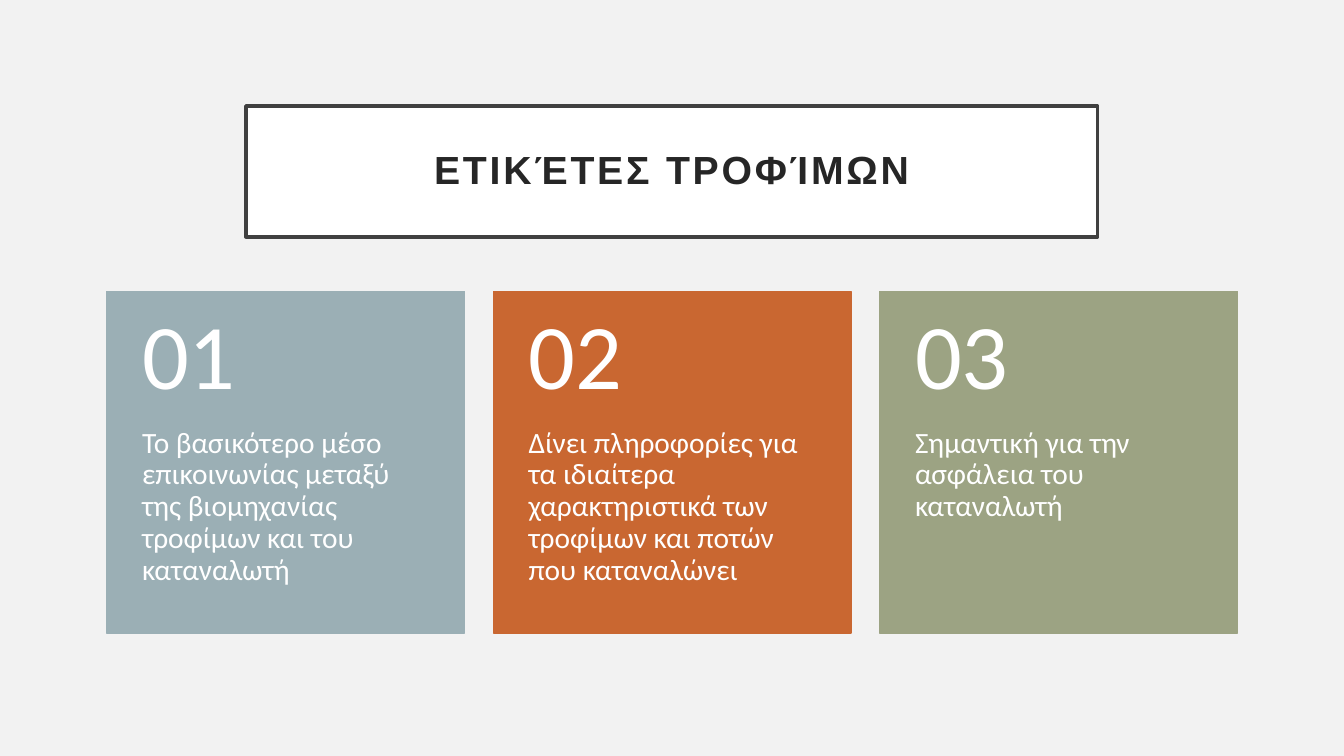
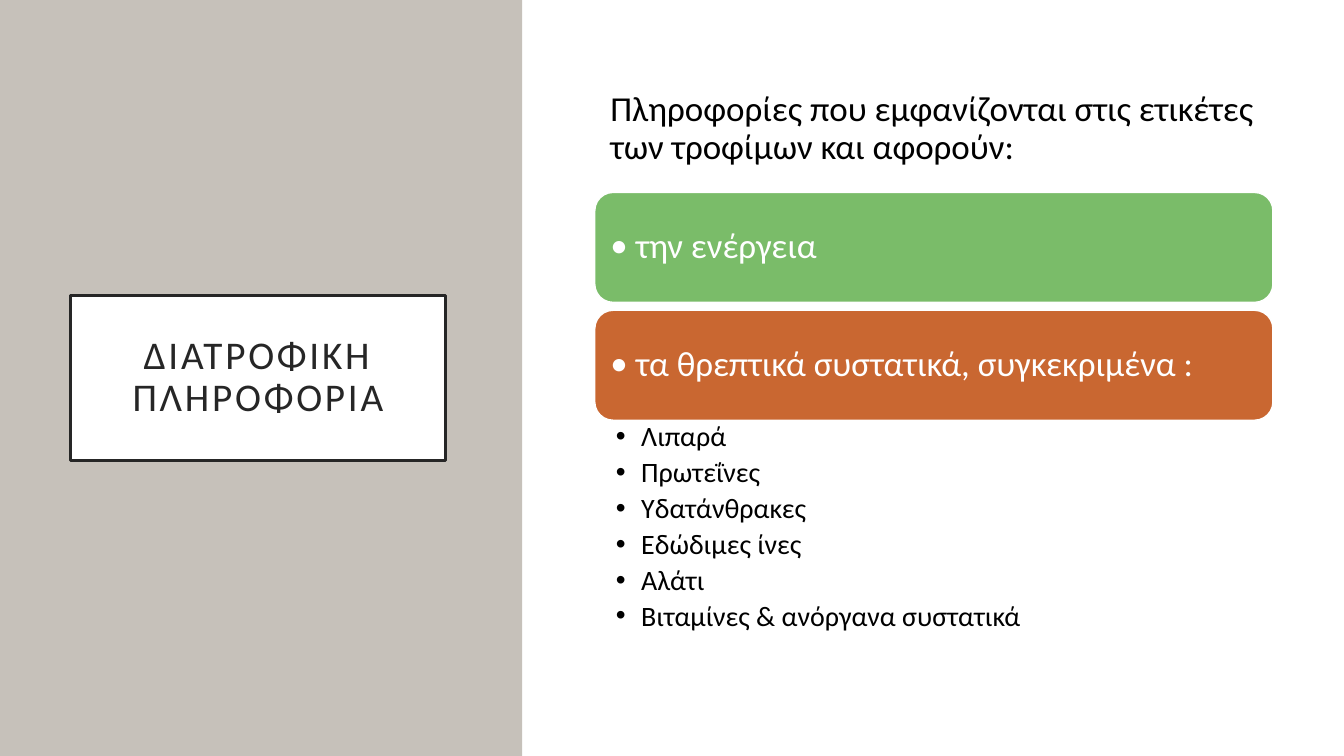
"""Build two slides on food labels and nutrition facts."""
from dataclasses import dataclass

from lxml import etree
from pptx import Presentation
from pptx import util as u
from pptx.dml import color as c
from pptx.enum import shapes as s, text as t
from pptx.oxml import ns


@dataclass(frozen=True)
class Theme:
    pale: str = "F2F2F2"
    white: str = "FFFFFF"
    black: str = "000000"
    ink: str = "262626"
    frame: str = "404040"
    sand: str = "C6C1BA"
    blue: str = "9BAFB5"
    rust: str = "C96731"
    olive: str = "9CA383"
    green: str = "7ABC69"
    font: str = "Calibri"
    alt: str = "Arial"
    title: int = 28
    digit: int = 66
    body: int = 21
    row: int = 25
    item: int = 20


@dataclass(frozen=True)
class Box:
    left: float
    top: float
    width: float
    height: float

    def cm(self) -> list:
        return [u.Cm(v) for v in (self.left, self.top, self.width, self.height)]


@dataclass(frozen=True)
class Card:
    digit: str
    text: str
    fill: str


@dataclass(frozen=True)
class Row:
    text: str
    fill: str
    ink: str
    mark: str = ""


TH = Theme()
WIDE, HIGH = 33.87, 19.05
CARDS = (
    Card("01", "Το βασικότερο μέσο επικοινωνίας μεταξύ της βιομηχανίας "
         "τροφίμων και του καταναλωτή", TH.blue),
    Card("02", "Δίνει πληροφορίες για τα ιδιαίτερα χαρακτηριστικά των "
         "τροφίμων και ποτών που καταναλώνει", TH.rust),
    Card("03", "Σημαντική για την ασφάλεια του καταναλωτή", TH.olive),
)
ROWS = (
    Row("Πληροφορίες που εμφανίζονται στις ετικέτες των τροφίμων και αφορούν:",
        TH.white, TH.black),
    Row("την ενέργεια", TH.green, TH.white, TH.font),
    Row("τα θρεπτικά συστατικά, συγκεκριμένα :", TH.rust, TH.white, TH.font),
)
ITEMS = ("Λιπαρά", "Πρωτεΐνες", "Υδατάνθρακες", "Εδώδιμες ίνες", "Αλάτι",
         "Βιταμίνες & ανόργανα συστατικά")


def rgb(code: str) -> c.RGBColor:
    return c.RGBColor.from_string(code)


def paint(shape, fill: str, line: str = "", width: float = 1) -> None:
    shape.fill.solid()
    shape.fill.fore_color.rgb = rgb(fill)
    if line:
        shape.line.color.rgb = rgb(line)
        shape.line.width = u.Pt(width)
    else:
        shape.line.fill.background()


def place(shape, box: Box) -> None:
    shape.left, shape.top, shape.width, shape.height = box.cm()


def block(slide, box: Box, fill: str, line: str = "",
          kind=s.MSO_SHAPE.RECTANGLE):
    shape = slide.shapes.add_shape(kind, *box.cm())
    shape.shadow.inherit = False
    paint(shape, fill, line)
    return shape


def bullet(para, font: str) -> None:
    props = para._p.get_or_add_pPr()
    props.set("marL", str(u.Cm(0.64)))
    props.set("indent", str(-u.Cm(0.64)))
    etree.SubElement(props, ns.qn("a:buFont")).set("typeface", font)
    etree.SubElement(props, ns.qn("a:buChar")).set("char", "•")


def write(shape, *lines: str, size: int, ink: str, font: str = TH.font,
          bold: bool = False, track: int = 0, mark: str = "", after: int = 0,
          align=t.PP_ALIGN.LEFT, anchor=t.MSO_ANCHOR.MIDDLE,
          pad: tuple = (0.25, 0.25, 0.25, 0.25)) -> None:
    frame = shape.text_frame
    frame.word_wrap = True
    frame.auto_size = t.MSO_AUTO_SIZE.NONE
    frame.vertical_anchor = anchor
    (frame.margin_left, frame.margin_top,
     frame.margin_right, frame.margin_bottom) = [u.Cm(v) for v in pad]
    for i, line in enumerate(lines):
        para = frame.add_paragraph() if i else frame.paragraphs[0]
        para.alignment, para.line_spacing = align, 0.9
        para.space_before, para.space_after = u.Pt(0), u.Pt(after)
        if mark:
            bullet(para, mark)
        run = para.add_run()
        run.text = line
        run.font.name, run.font.size = font, u.Pt(size)
        run.font.bold = bold
        run.font.color.rgb = rgb(ink)
        if track:
            run.font._element.set("spc", str(track * 100))


def start(deck, layout: int, back: str, text: str, box: Box, line: str,
          **form):
    slide = deck.slides.add_slide(deck.slide_layouts[layout])
    slide.background.fill.solid()
    slide.background.fill.fore_color.rgb = rgb(back)
    title = slide.shapes.title
    place(title, box)
    paint(title, TH.white, line, 2.5)
    write(title, text, size=TH.title, ink=TH.ink, track=2,
          align=t.PP_ALIGN.CENTER, pad=(0.51,) * 4, **form)
    return slide


def labels(deck) -> None:
    slide = start(deck, 5, TH.pale, "ΕΤΙΚΈΤΕΣ ΤΡΟΦΊΜΩΝ",
                  Box(6.2, 2.67, 21.46, 3.3), TH.frame,
                  font=TH.alt, bold=True)
    top, width, high, head, step = 7.34, 9.02, 8.61, 3.44, 9.74
    for i, card in enumerate(CARDS):
        left = 2.69 + i * step
        block(slide, Box(left, top, width, high), card.fill, card.fill)
        body = slide.shapes.add_textbox(
            *Box(left, top + head, width, high - head).cm())
        write(body, card.text, size=TH.body, ink=TH.white,
              anchor=t.MSO_ANCHOR.TOP, pad=(0.89, 0, 0.89, 0.91))
        digit = slide.shapes.add_textbox(*Box(left, top, width, head).cm())
        write(digit, card.digit, size=TH.digit, ink=TH.white,
              pad=(0.89, 0.46, 0.89, 0.46))


def facts(deck) -> None:
    slide = start(deck, 1, TH.white, "ΔΙΑΤΡΟΦΙΚΗ ΠΛΗΡΟΦΟΡΙΑ",
                  Box(1.78, 7.44, 9.45, 4.17), TH.ink)
    side = block(slide, Box(0, 0, 13.16, HIGH), TH.sand)
    slide.shapes.title.element.addprevious(side.element)
    left, width = 14.99, 17.09
    for i, row in enumerate(ROWS):
        shape = block(slide, Box(left, 1.88 + i * 2.97, width, 2.77),
                      row.fill, TH.white, s.MSO_SHAPE.ROUNDED_RECTANGLE)
        write(shape, row.text, size=TH.row, ink=row.ink, mark=row.mark,
              pad=(0.26, 0.25, 0.26, 0.25))
    body = slide.placeholders[1]
    place(body, Box(left, 10.57, width, 5.74))
    write(body, *ITEMS, size=TH.item, ink=TH.black, mark=TH.alt, after=4,
          anchor=t.MSO_ANCHOR.TOP, pad=(0.53, 0.08, 0.48, 0.08))


def main() -> None:
    deck = Presentation()
    deck.slide_width, deck.slide_height = u.Cm(WIDE), u.Cm(HIGH)
    labels(deck)
    facts(deck)
    deck.save("out.pptx")


if __name__ == "__main__":
    main()
